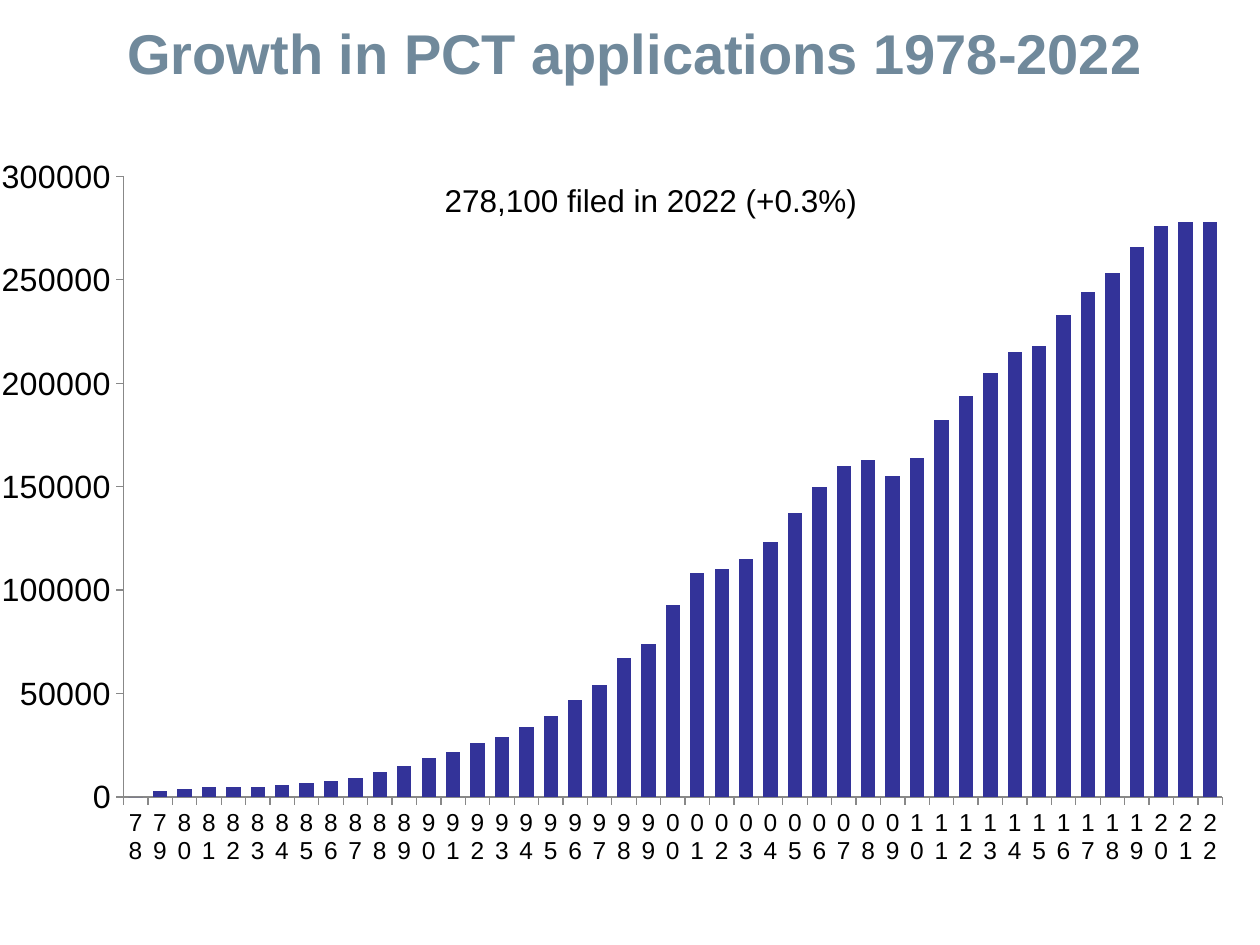
from lxml.etree import SubElement
from pptx import Presentation
from pptx.chart.data import CategoryChartData
from pptx.dml.color import RGBColor
from pptx.enum.chart import XL_CHART_TYPE, XL_TICK_LABEL_POSITION, XL_TICK_MARK
from pptx.enum.text import MSO_ANCHOR, PP_ALIGN
from pptx.oxml.ns import qn
from pptx.util import Pt

BLACK = RGBColor(0x00, 0x00, 0x00)
SLATE = RGBColor(0x70, 0x89, 0x9B)
INDIGO = RGBColor(0x33, 0x33, 0x99)
GREY = RGBColor(0x88, 0x88, 0x88)
FONT = "Arial"
YEARS = range(1978, 2023)
FILINGS_IN_THOUSANDS = [
    0, 3, 4, 5, 5, 5, 6, 7, 8, 9, 12, 15, 19, 22, 26,
    29, 34, 39, 47, 54, 67, 74, 93, 108, 110, 115, 123, 137, 150, 160,
    163, 155, 164, 182, 194, 205, 215, 218, 233, 244, 253, 266, 276, 278, 278,
]


def style_font(font, size, color=BLACK, bold=False):
    font.name = FONT
    font.size = Pt(size)
    font.bold = bold
    font.color.rgb = color


def add_text(page, text, left, top, width, height, size, color=BLACK,
             bold=False, align=PP_ALIGN.LEFT, anchor=MSO_ANCHOR.TOP):
    box = page.shapes.add_textbox(Pt(left), Pt(top), Pt(width), Pt(height))
    frame = box.text_frame
    frame.word_wrap = True
    frame.vertical_anchor = anchor
    para = frame.paragraphs[0]
    para.alignment = align
    span = para.add_run()
    span.text = text
    style_font(span.font, size, color, bold)


def style_axis(axis, size):
    axis.has_major_gridlines = False
    axis.major_tick_mark = XL_TICK_MARK.OUTSIDE
    axis.minor_tick_mark = XL_TICK_MARK.NONE
    axis.format.line.color.rgb = GREY
    axis.format.line.width = Pt(0.75)
    style_font(axis.tick_labels.font, size)


def keep_labels_upright(axis):
    body = axis._element.find(qn("c:txPr")).find(qn("a:bodyPr"))
    body.set("rot", "0")
    body.set("vert", "horz")


def place_plot(chart, x, y, w, h):
    plot_area = chart._chartSpace.chart.plotArea
    for old_layout in plot_area.findall(qn("c:layout")):
        plot_area.remove(old_layout)
    layout = plot_area.makeelement(qn("c:layout"))
    plot_area.insert(0, layout)
    manual = SubElement(layout, qn("c:manualLayout"))
    settings = {"layoutTarget": "inner", "xMode": "edge", "yMode": "edge",
                "x": x, "y": y, "w": w, "h": h}
    for name, value in settings.items():
        SubElement(manual, qn(f"c:{name}")).set("val", str(value))


def add_filings_chart(page):
    data = CategoryChartData()
    data.categories = [f"{year % 100:02d}" for year in YEARS]
    data.add_series("Series 1", [value * 1000 for value in FILINGS_IN_THOUSANDS])
    chart = page.shapes.add_chart(
        XL_CHART_TYPE.COLUMN_CLUSTERED, Pt(0), Pt(24), Pt(705.6), Pt(479.5), data
    ).chart
    chart.has_title = False
    chart.has_legend = False
    style_font(chart.font, 18.4)
    style_axis(chart.category_axis, 14)
    chart.category_axis.tick_label_position = XL_TICK_LABEL_POSITION.LOW
    keep_labels_upright(chart.category_axis)
    style_axis(chart.value_axis, 18.4)
    chart.value_axis.minimum_scale = 0
    chart.value_axis.maximum_scale = 300000
    chart.value_axis.major_unit = 50000
    columns = chart.plots[0]
    columns.gap_width = 70
    columns.vary_by_categories = False
    fill = columns.series[0].format.fill
    fill.solid()
    fill.fore_color.rgb = INDIGO
    place_plot(chart, 0.1, 0.16, 0.89, 0.74)


def main():
    deck = Presentation()
    deck.slide_width = Pt(720)
    deck.slide_height = Pt(540)
    page = deck.slides.add_slide(deck.slide_layouts[6])
    add_filings_chart(page)
    add_text(page, "278,100 filed in 2022 (+0.3%)", 247, 100, 255, 29, size=18)
    add_text(page, "Growth in PCT applications 1978-2022", 39, 1, 648, 57.5,
             size=32, color=SLATE, bold=True, align=PP_ALIGN.CENTER,
             anchor=MSO_ANCHOR.MIDDLE)
    deck.save("out.pptx")


if __name__ == "__main__":
    main()
